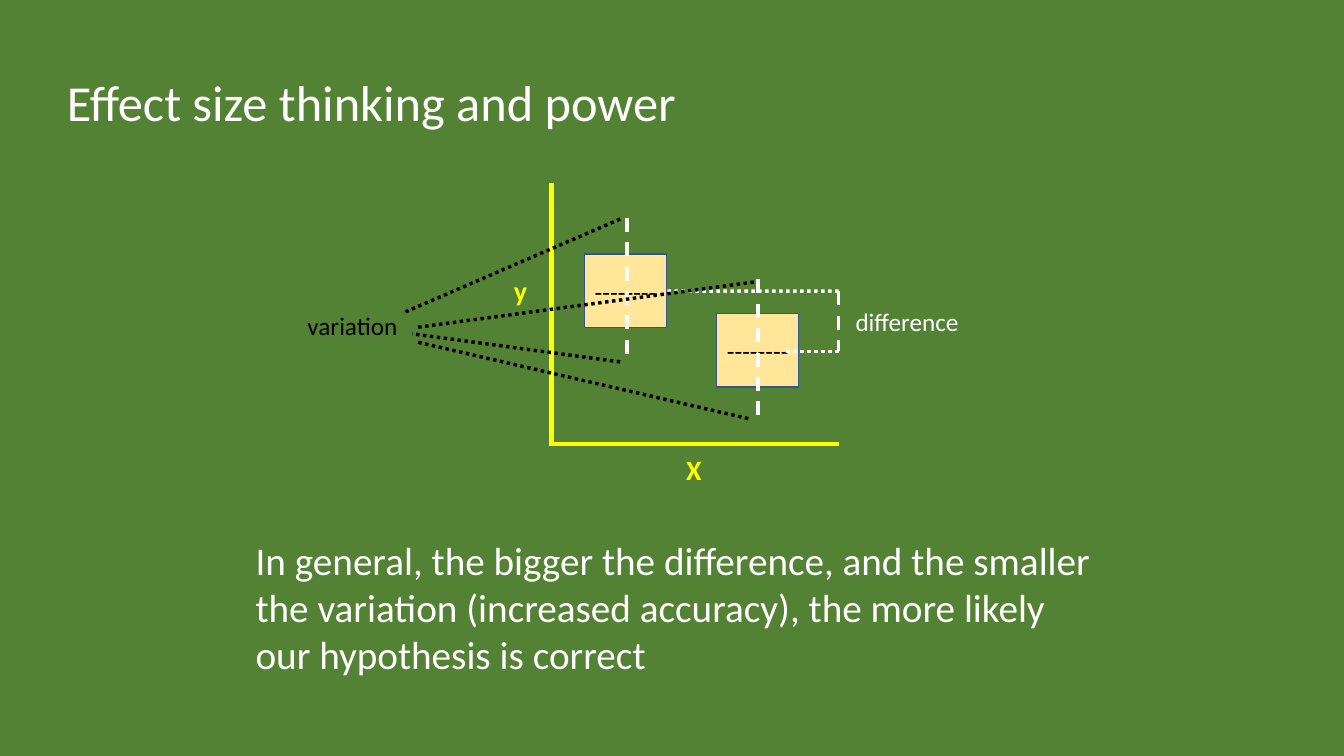
from pptx import Presentation
from pptx.dml.color import RGBColor
from pptx.enum import dml, shapes, text
from pptx.oxml.ns import qn
from pptx.util import Pt
from lxml import etree

COLORS = {"green": "548235", "white": "FFFFFF", "yellow": "FFFF00",
          "cream": "FFE699", "blue": "325491", "black": "000000"}
TITLE = "Effect size thinking and power"
SUMMARY = ("In general, the bigger the difference, and the smaller the variation "
           "(increased accuracy), the more likely our hypothesis is correct")
LABELS = [("X", 483, 319.5, 26, 32, 20, "yellow", True),
          ("y", 360, 191.5, 24.5, 32, 20, "yellow", True),
          ("difference", 604, 215.5, 89.5, 29, 18, "white", False),
          ("variation", 212.5, 218, 80, 29, 18, "black", False)]
AXES = [(394, 131, 394, 318.5), (599, 317, 394, 317)]
BOX_W, BOX_H = 58.5, 52.6
BOXES = [(417.6, 181.6), (512, 224)]
MEAN = "--------"
WHISKERS = [(448, 155.5, 258.5), (541.5, 199.5, 302)]
BRACKET_X, BRACKET_TOP, BRACKET_BOTTOM = 599, 208, 251
VARIATION = [(443, 156.5, 288, 223.5), (443, 258.5, 294.5, 238.5),
             (534.5, 299, 296.5, 244), (538.5, 201.5, 296.5, 234)]

DASH = dml.MSO_LINE.DASH
DOT = dml.MSO_LINE.ROUND_DOT


def rgb(name):
    return RGBColor.from_string(COLORS[name])


def write(shape, content, size, color, bold=False, wrap=True, align=text.PP_ALIGN.LEFT,
          anchor=text.MSO_ANCHOR.TOP):
    tf = shape.text_frame
    tf.text = content
    tf.word_wrap = wrap
    tf.vertical_anchor = anchor
    p = tf.paragraphs[0]
    p.alignment = align
    p.font.name, p.font.size, p.font.bold = "Calibri", Pt(size), bold
    p.font.color.rgb = rgb(color)


def add_text(s, content, x, y, w, h, size, color, bold=False, wrap=False):
    write(s.shapes.add_textbox(Pt(x), Pt(y), Pt(w), Pt(h)), content, size, color, bold, wrap)


def add_line(s, x1, y1, x2, y2, color, dash=None, width=2.5):
    c = s.shapes.add_connector(shapes.MSO_CONNECTOR.STRAIGHT, Pt(x1), Pt(y1), Pt(x2), Pt(y2))
    c.line.color.rgb = rgb(color)
    c.line.width = Pt(width)
    if dash:
        c.line.dash_style = dash
    etree.SubElement(c._element.spPr, qn("a:effectLst"))
    return c


def add_box(s, x, y):
    sp = s.shapes.add_shape(shapes.MSO_SHAPE.RECTANGLE, Pt(x), Pt(y), Pt(BOX_W), Pt(BOX_H))
    sp.shadow.inherit = False
    sp.fill.solid()
    sp.fill.fore_color.rgb = rgb("cream")
    sp.line.color.rgb = rgb("blue")
    sp.line.width = Pt(1)
    write(sp, MEAN, 18, "black", wrap=False, align=text.PP_ALIGN.CENTER,
          anchor=text.MSO_ANCHOR.MIDDLE)
    return sp


def main():
    prs = Presentation()
    prs.slide_width, prs.slide_height = Pt(960), Pt(540)
    s = prs.slides.add_slide(prs.slide_layouts[5])
    s.background.fill.solid()
    s.background.fill.fore_color.rgb = rgb("green")

    title = s.shapes.title
    title.left, title.top, title.width, title.height = Pt(40.5), Pt(47), Pt(771), Pt(51)
    write(title, TITLE, 36, "white")
    title.text_frame.auto_size = text.MSO_AUTO_SIZE.NONE
    add_text(s, SUMMARY, 175.5, 379.5, 619, 108.5, 28, "white", wrap=True)

    for axis in AXES:
        add_line(s, *axis, "yellow", width=3.25)
    boxes = [add_box(s, x, y) for x, y in BOXES]
    for x, top, bottom in WHISKERS:
        add_line(s, x, top, x, bottom, "white", DASH)

    add_line(s, BRACKET_X, BRACKET_TOP, BRACKET_X, BRACKET_BOTTOM, "white", DASH)
    upper = add_line(s, BRACKET_X, BRACKET_TOP, 476, BRACKET_TOP, "white", DOT)
    upper.end_connect(boxes[0], 3)
    add_line(s, BRACKET_X, BRACKET_BOTTOM, 561.5, BRACKET_BOTTOM, "white", DOT)

    for ray in VARIATION:
        add_line(s, *ray, "black", DOT)
    for label in LABELS:
        add_text(s, *label)
    prs.save("out.pptx")


if __name__ == "__main__":
    main()
